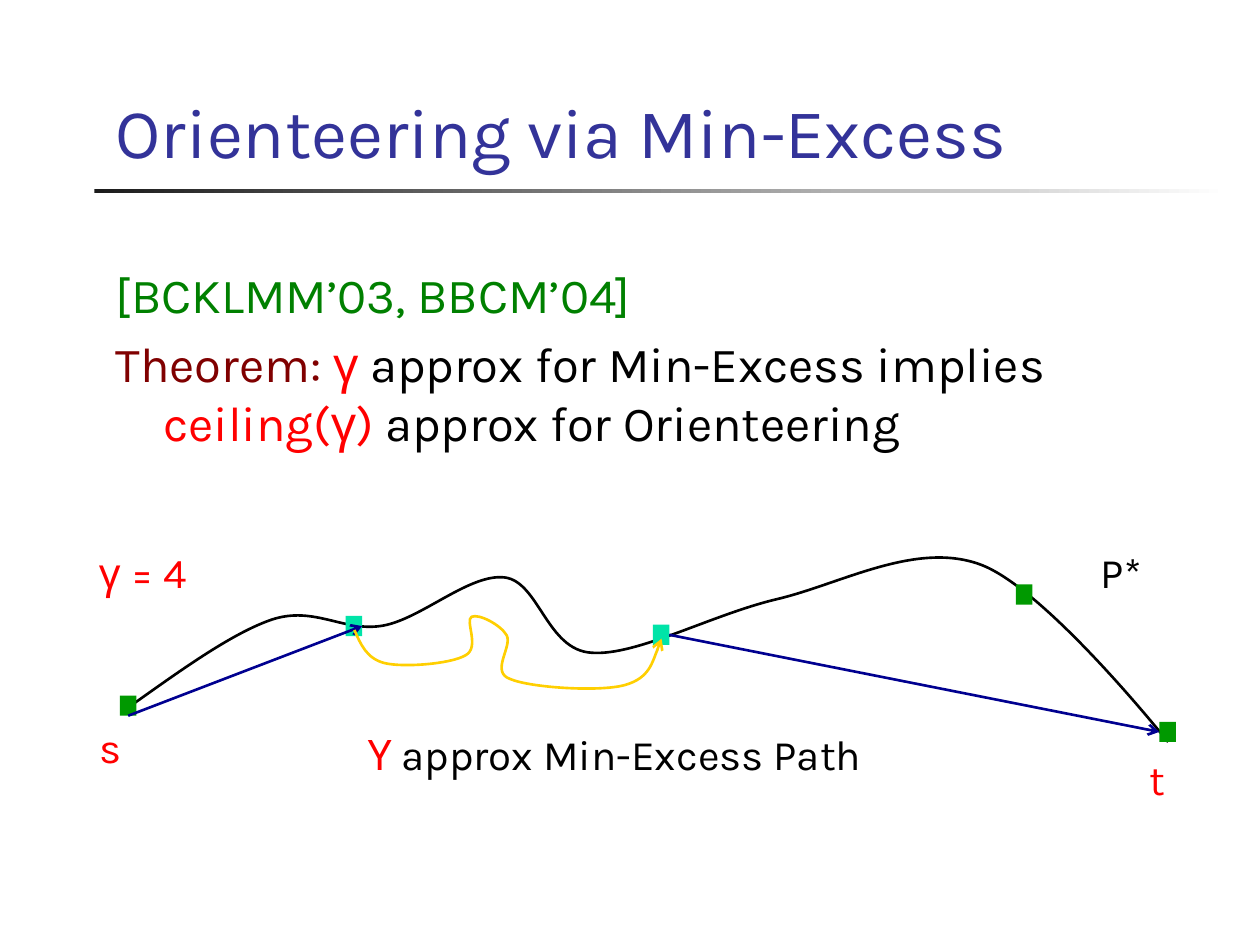
"""Build the slide on Orienteering via Min-Excess."""
import pptx
import pptx.util
import pptx.dml.color
import pptx.enum.shapes
import pptx.enum.text
import pptx.oxml.ns
import lxml.etree

Pt = pptx.util.Pt
qn = pptx.oxml.ns.qn
Kind = pptx.enum.shapes.MSO_SHAPE
Text = pptx.enum.text

THEME = {
    "face": {"main": "Karla", "greek": "Noto Sans"},
    "size": {"title": 40, "body": 28, "label": 24},
    "color": {"title": "333399", "cite": "008000", "lead": "800000", "red": "FF0000",
              "black": "000000", "dot": "009900", "stop": "00E4A8", "jump": "000090",
              "route": "FFCF01", "dark": "1C1C1C", "white": "FFFFFF"},
    "line": 1.5,
}

TITLE = [[("Orienteering via Min-Excess", "title", "main")]]
BODY = [
    [("[BCKLMM’03, BBCM’04]", "cite", "main")],
    [("Theorem: ", "lead", "main"), ("γ", "red", "greek"),
     (" approx for Min-Excess implies ", "black", "main"),
     ("ceiling(", "red", "main"), ("γ", "red", "greek"), (")", "red", "main"),
     (" approx for Orienteering", "black", "main")],
]
LABELS = [
    ((649.5, 427, 46), [("t", "red", "main")]),
    ((49.5, 409, 46), [("s", "red", "main")]),
    ((622, 309, 73), [("P*", "black", "main")]),
    ((49.5, 309, 105), [("γ ", "red", "greek"), ("= 4", "red", "main")]),
    ((197.5, 412.5, 310), [(" ", "black", "main"), ("Υ", "red", "greek"),
                           (" approx Min-Excess Path", "black", "main")]),
]
DOTS = {
    "s": (68.5, 397.5, "dot"), "t": (662.5, 412.5, "dot"),
    "u": (197.5, 352, "stop"), "v": (373, 357, "stop"), "w": (580.5, 334, "dot"),
}
DOT_SIZE = (9.5, 11.5)
JUMPS = [("s", 2, "u", 3), ("v", 3, "t", 1)]
BEST = [
    (73, 404.5), (102, 384), (132, 362), (155.5, 354), (180, 346), (196.5, 361.5),
    (219, 357.5), (241, 353.5), (268.5, 327.5), (288.5, 330), (308, 332.5), (312.5, 371.5),
    (338, 373), (363.5, 375), (406, 351.5), (443.5, 342.5), (480, 334), (523, 309),
    (560, 322.5), (597.5, 336), (667.5, 424), (667.5, 424),
]
ROUTE = [
    (202.5, 360), (206, 368), (209.5, 376.5), (220, 379), (230.5, 381.5), (257.5, 379.5),
    (266, 374.5), (274.5, 370), (265.5, 354.5), (269.5, 352.5), (273.5, 350.5), (286, 357),
    (289.5, 363), (293, 369.5), (280, 384), (291.5, 388), (303, 393), (342.5, 395.5),
    (357, 391.5), (371.5, 387.5), (378, 365), (378, 365),
]


def hue(name):
    return pptx.dml.color.RGBColor.from_string(THEME["color"][name])


def place(shape, left, top, width, height):
    shape.left, shape.top = Pt(left), Pt(top)
    shape.width, shape.height = Pt(width), Pt(height)


def write(frame, paras, size):
    frame.word_wrap = True
    frame.auto_size = Text.MSO_AUTO_SIZE.NONE
    for num, runs in enumerate(paras):
        para = frame.add_paragraph() if num else frame.paragraphs[0]
        para.alignment = Text.PP_ALIGN.LEFT
        for words, color, face in runs:
            run = para.add_run()
            run.text = words
            run.font.size = Pt(THEME["size"][size])
            run.font.name = THEME["face"][face]
            run.font.color.rgb = hue(color)


def hang(para, width):
    para.space_before = Pt(6)
    props = para._p.get_or_add_pPr()
    props.set("marL", str(Pt(width)))
    props.set("indent", str(-Pt(width)))
    lxml.etree.SubElement(props, qn("a:buNone"))


def box(slide, left, top, width, height):
    shape = slide.shapes.add_shape(
        Kind.RECTANGLE, Pt(left), Pt(top), Pt(width), Pt(height))
    shape.shadow.inherit = False
    shape.line.fill.background()
    return shape


def stroke(shape, color, arrow):
    shape.line.color.rgb = hue(color)
    shape.line.width = Pt(THEME["line"])
    if arrow:
        lxml.etree.SubElement(shape.line._get_or_add_ln(), qn("a:tailEnd"), type="arrow")


def curve(slide, points, color, arrow=False):
    spots = [(Pt(x), Pt(y)) for x, y in points]
    pen = slide.shapes.build_freeform(*spots[0])
    pen.add_line_segments(spots[1:], close=False)
    shape = pen.convert_to_shape()
    steps = list(shape._element.iter(qn("a:lnTo")))
    for first in range(0, len(steps), 3):
        trio = steps[first:first + 3]
        bend = lxml.etree.Element(qn("a:cubicBezTo"))
        trio[0].addprevious(bend)
        for step in trio:
            bend.append(step[0])
            step.getparent().remove(step)
    shape.shadow.inherit = False
    shape.fill.background()
    stroke(shape, color, arrow)


def main():
    deck = pptx.Presentation()
    deck.slide_width, deck.slide_height = Pt(720), Pt(540)
    slide = deck.slides.add_slide(deck.slide_layouts[1])

    rule = box(slide, 54, 108, 648, 2.25)
    rule.fill.gradient()
    rule.fill.gradient_angle = 0
    for stop, name in zip(rule.fill.gradient_stops, ("dark", "white")):
        stop.color.rgb = hue(name)

    title, body = slide.placeholders
    place(title, 59, 12, 644, 90)
    write(title.text_frame, TITLE, "title")
    title.text_frame.vertical_anchor = Text.MSO_ANCHOR.BOTTOM
    place(body, 59, 147.5, 644, 350.5)
    write(body.text_frame, BODY, "body")
    for para in body.text_frame.paragraphs:
        hang(para, 27)

    curve(slide, BEST, "black")
    dots = {}
    for name, (left, top, color) in DOTS.items():
        dots[name] = box(slide, left, top, *DOT_SIZE)
        dots[name].fill.solid()
        dots[name].fill.fore_color.rgb = hue(color)
    for head, out, tail, into in JUMPS:
        link = slide.shapes.add_connector(
            pptx.enum.shapes.MSO_CONNECTOR.STRAIGHT, 0, 0, 0, 0)
        link.begin_connect(dots[head], out)
        link.end_connect(dots[tail], into)
        stroke(link, "jump", True)
        lxml.etree.SubElement(link._element.spPr, qn("a:effectLst"))
    curve(slide, ROUTE, "route", True)

    for (left, top, width), runs in LABELS:
        label = slide.shapes.add_textbox(Pt(left), Pt(top), Pt(width), Pt(36))
        write(label.text_frame, [runs], "label")

    deck.save("out.pptx")


if __name__ == "__main__":
    main()
